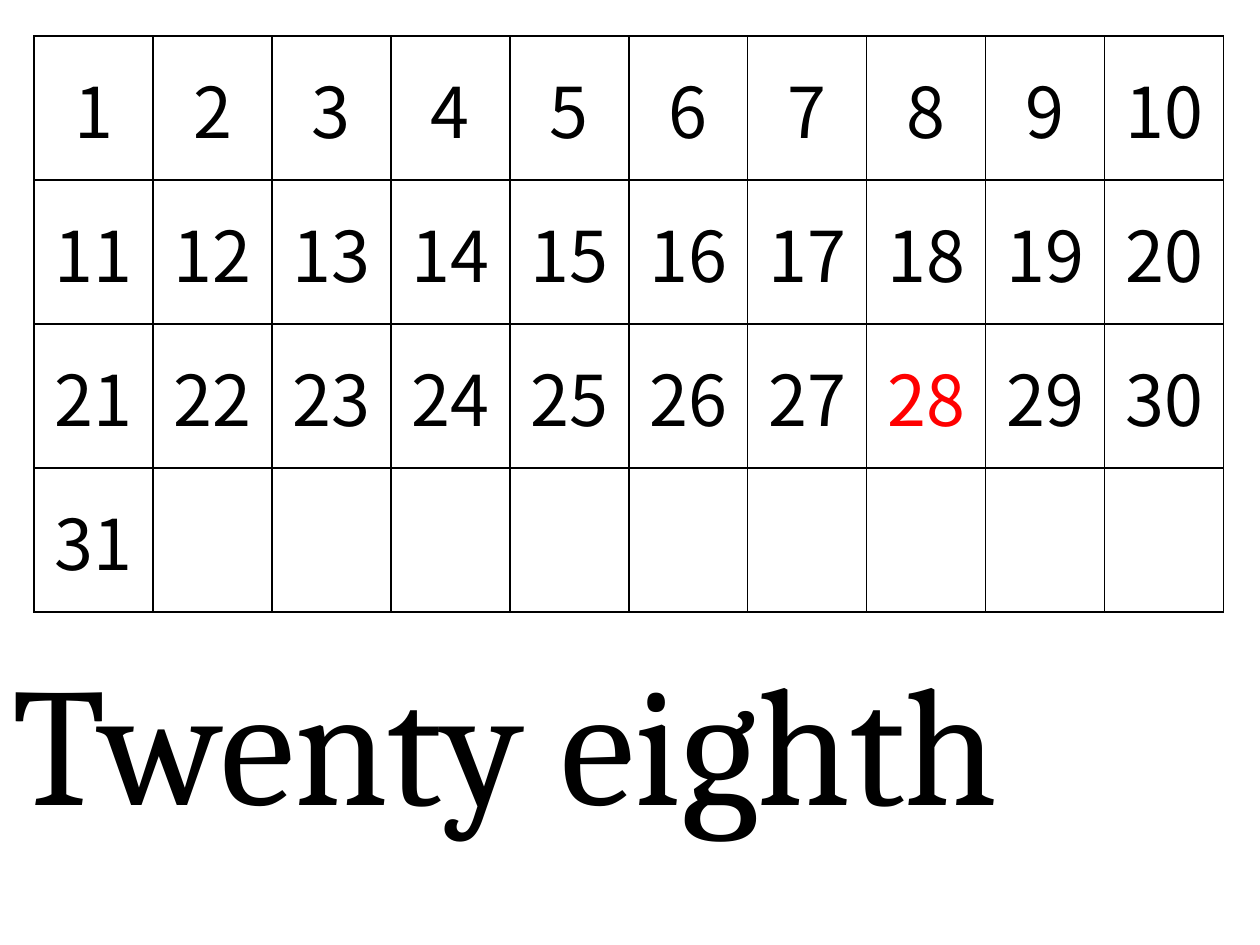
"""Build a calendar slide that highlights one day and spells out its ordinal."""
from dataclasses import dataclass

from lxml import etree
from pptx import Presentation
from pptx import util as u
from pptx.dml.color import RGBColor
from pptx.enum import text
from pptx.oxml import ns

EMU_PER_PX = 914400 / 126


@dataclass(frozen=True)
class Theme:
    ink: str = "000000"
    highlight: str = "FF0000"
    paper: str = "FFFFFF"
    day_font: str = "Noto Sans CJK JP"
    title_font: str = "Cambria"
    day_size: int = 40
    title_size: int = 96
    border_width: int = 1


@dataclass(frozen=True)
class Box:
    left: int
    top: int
    width: int
    height: int


@dataclass(frozen=True)
class Calendar:
    box: Box
    rows: int
    columns: int
    last_day: int
    marked_day: int


THEME = Theme()
CALENDAR = Calendar(Box(34, 36, 1190, 576), rows=4, columns=10, last_day=31, marked_day=28)
TITLE_BOX = Box(0, 631, 1166, 217)


def px(length: int) -> u.Emu:
    return u.Emu(round(length * EMU_PER_PX))


def corners(box: Box) -> tuple[u.Emu, ...]:
    return px(box.left), px(box.top), px(box.width), px(box.height)


def format_runs(paragraph, font: str, size: int, color: str) -> None:
    for run in paragraph.runs:
        run.font.name = font
        run.font.size = u.Pt(size)
        run.font.color.rgb = RGBColor.from_string(color)


def style_cell(cell) -> None:
    cell.vertical_anchor = text.MSO_ANCHOR.MIDDLE
    properties = cell._tc.get_or_add_tcPr()
    for side in ("lnL", "lnR", "lnT", "lnB"):
        line = etree.SubElement(properties, ns.qn(f"a:{side}"), w=str(u.Pt(THEME.border_width)))
        fill = etree.SubElement(line, ns.qn("a:solidFill"))
        etree.SubElement(fill, ns.qn("a:srgbClr"), val=THEME.ink)
    cell.fill.solid()
    cell.fill.fore_color.rgb = RGBColor.from_string(THEME.paper)


def draw_calendar(slide, calendar: Calendar) -> None:
    table = slide.shapes.add_table(calendar.rows, calendar.columns, *corners(calendar.box)).table
    table.first_row = table.horz_banding = False
    for day, cell in enumerate(table.iter_cells(), start=1):
        style_cell(cell)
        if day <= calendar.last_day:
            paragraph = cell.text_frame.paragraphs[0]
            paragraph.text = str(day)
            paragraph.alignment = text.PP_ALIGN.CENTER
            color = THEME.highlight if day == calendar.marked_day else THEME.ink
            format_runs(paragraph, THEME.day_font, THEME.day_size, color)


def draw_title(slide, words: str, box: Box) -> None:
    title = slide.shapes.title
    title.left, title.top, title.width, title.height = corners(box)
    frame = title.text_frame
    frame.text = words
    frame.word_wrap = False
    frame.auto_size = text.MSO_AUTO_SIZE.SHAPE_TO_FIT_TEXT
    frame.vertical_anchor = text.MSO_ANCHOR.TOP
    paragraph = frame.paragraphs[0]
    paragraph.alignment = text.PP_ALIGN.LEFT
    format_runs(paragraph, THEME.title_font, THEME.title_size, THEME.ink)


def main() -> None:
    presentation = Presentation()
    presentation.slide_width, presentation.slide_height = px(1260), px(945)
    slide = presentation.slides.add_slide(presentation.slide_layouts.get_by_name("Title Only"))
    draw_calendar(slide, CALENDAR)
    draw_title(slide, "Twenty eighth", TITLE_BOX)
    presentation.save("out.pptx")


if __name__ == "__main__":
    main()
